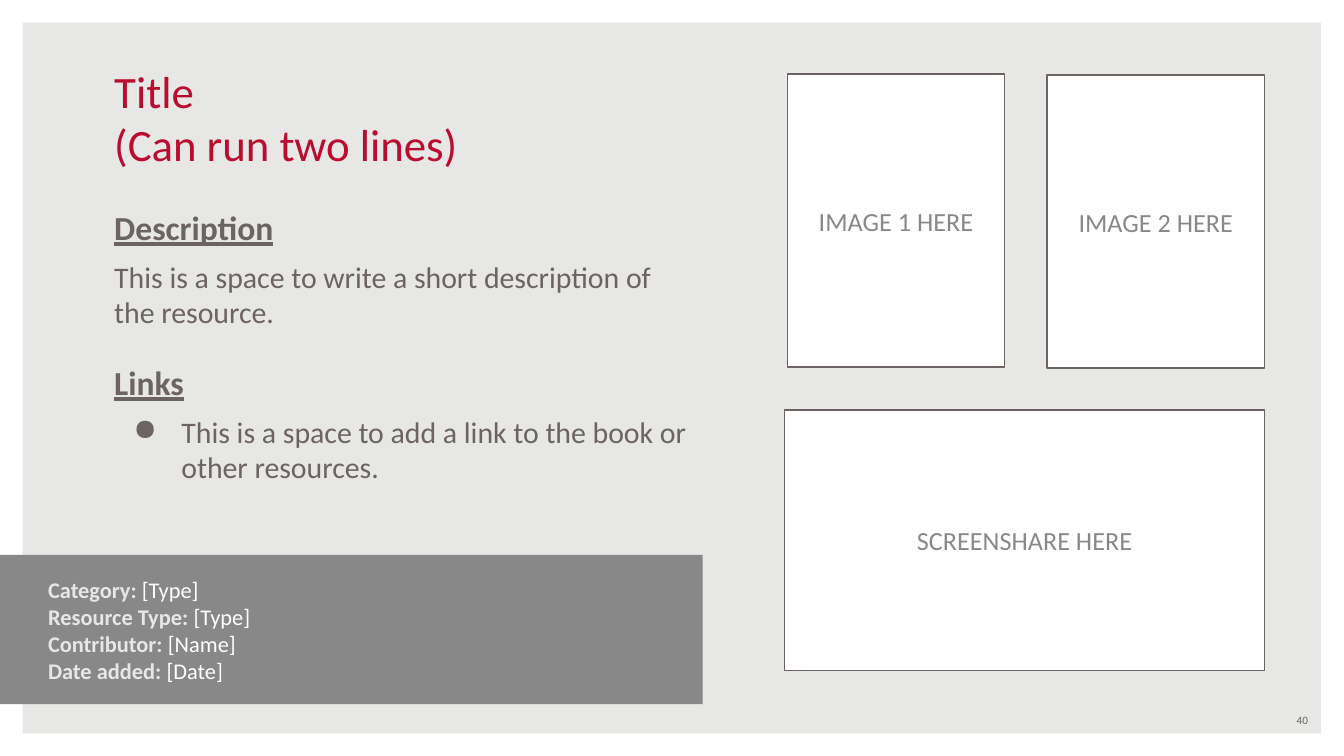
from lxml.etree import SubElement
from pptx import Presentation
from pptx.dml.color import RGBColor
from pptx.enum.shapes import MSO_SHAPE as Preset
from pptx.enum.text import MSO_ANCHOR as Anchor, MSO_AUTO_SIZE as AutoSize, PP_ALIGN as Align
from pptx.oxml.ns import qn
from pptx.util import Cm, Pt

RED, DARK, GREY, PALE, WHITE = "BA0C2F", "6C6463", "888888", "E7E7E5", "FFFFFF"
INSET, THIN_INSET = 0.25, 0.13


def rgb(value):
    return RGBColor.from_string(value)


def add_panel(slide, box, fill, line=None, preset=Preset.RECTANGLE):
    panel = slide.shapes.add_shape(preset, *map(Cm, box))
    panel.shadow.inherit = False
    panel.fill.solid()
    panel.fill.fore_color.rgb = rgb(fill)
    if line:
        panel.line.color.rgb = rgb(line)
        panel.line.width = Pt(0.75)
    else:
        panel.line.fill.background()
    return panel


def prepare_frame(shape, anchor=Anchor.TOP, inset_y=THIN_INSET):
    frame = shape.text_frame
    frame.word_wrap = True
    frame.vertical_anchor = anchor
    frame.margin_left = frame.margin_right = Cm(INSET)
    frame.margin_top = frame.margin_bottom = Cm(inset_y)
    return frame


def add_text_box(slide, box, anchor=Anchor.TOP, inset_y=THIN_INSET):
    return prepare_frame(slide.shapes.add_textbox(*map(Cm, box)), anchor, inset_y)


def next_paragraph(frame):
    """Return the unused first paragraph, or a new one."""
    first = frame.paragraphs[0]
    return frame.add_paragraph() if first.runs else first


def add_run(paragraph, text, size, color, bold=False, underline=False):
    run = paragraph.add_run()
    run.text = text
    font = run.font
    font.name, font.size = "Calibri", Pt(size)
    font.bold, font.underline = bold, underline
    font.color.rgb = rgb(color)


def add_bullet(paragraph, color):
    properties = paragraph._p.get_or_add_pPr()
    properties.set("marL", str(Cm(1.27)))
    properties.set("indent", str(Cm(-0.91)))
    bullet_color = SubElement(properties, qn("a:buClr"))
    SubElement(bullet_color, qn("a:srgbClr"), val=color)
    SubElement(properties, qn("a:buChar"), char="●")


def add_placeholder_panel(slide, box, label):
    panel = add_panel(slide, box, WHITE, DARK)
    paragraph = prepare_frame(panel, Anchor.MIDDLE, INSET).paragraphs[0]
    paragraph.alignment = Align.CENTER
    add_run(paragraph, label, 14, GREY)


def add_section(frame, heading, body, bulleted=False):
    heading_line = next_paragraph(frame)
    if heading_line is not None and len(frame.paragraphs) > 1:
        heading_line.space_before = Pt(17)
    add_run(heading_line, heading, 18, DARK, bold=True, underline=True)
    body_line = next_paragraph(frame)
    if bulleted:
        add_bullet(body_line, DARK)
    body_line.space_before = Pt(6)
    add_run(body_line, body, 16, DARK)


def add_details(slide, details):
    add_panel(slide, (0, 10.49, 13.28, 2.82), GREY)
    frame = add_text_box(slide, (0.66, 10.64, 9.47, 2.57), inset_y=INSET)
    frame.auto_size = AutoSize.SHAPE_TO_FIT_TEXT
    for label, value in details:
        paragraph = next_paragraph(frame)
        add_run(paragraph, f"{label}: ", 12, PALE, bold=True)
        add_run(paragraph, value, 12, WHITE)


def main():
    deck = Presentation()
    deck.slide_width, deck.slide_height = Cm(25.4), Cm(14.29)
    slide = deck.slides.add_slide(deck.slide_layouts[6])
    slide.background.fill.solid()
    slide.background.fill.fore_color.rgb = rgb(PALE)
    border = add_panel(slide, (0, 0, 25.4, 14.29), WHITE, preset=Preset.FRAME)
    border.adjustments[0] = 0.03

    add_placeholder_panel(slide, (14.88, 1.4, 4.11, 5.54), "IMAGE 1 HERE")
    add_placeholder_panel(slide, (19.79, 1.42, 4.11, 5.54), "IMAGE 2 HERE")
    add_placeholder_panel(slide, (14.83, 7.75, 9.07, 4.93), "SCREENSHARE HERE")

    title = add_text_box(slide, (1.91, 1.12, 12.09, 2.24), Anchor.BOTTOM)
    for line in ("Title", "(Can run two lines)"):
        add_run(next_paragraph(title), line, 24, RED)

    content = add_text_box(slide, (1.91, 3.78, 11.38, 7.01))
    add_section(content, "Description",
                "This is a space to write a short description of the resource.")
    add_section(content, "Links",
                "This is a space to add a link to the book or other resources.",
                bulleted=True)

    add_details(slide, [("Category", "[Type]"), ("Resource Type", "[Type]"),
                        ("Contributor", "[Name]"), ("Date added", "[Date]")])

    page_number = add_text_box(slide, (19.05, 13.36, 5.92, 0.51), Anchor.MIDDLE)
    page_number.paragraphs[0].alignment = Align.RIGHT
    add_run(page_number.paragraphs[0], "40", 6, DARK)
    deck.save("out.pptx")


if __name__ == "__main__":
    main()
